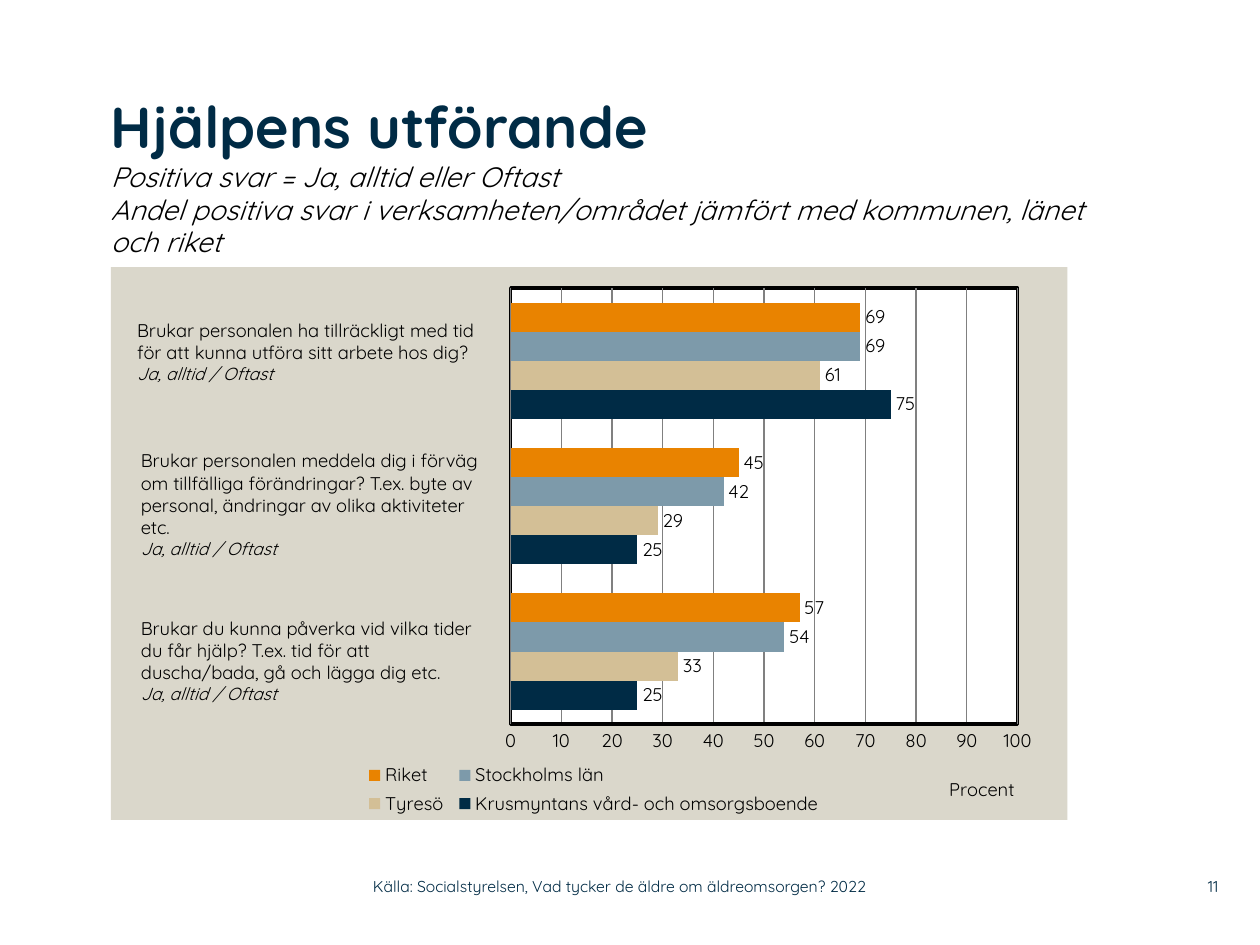
from copy import deepcopy
from dataclasses import dataclass

from lxml import etree
from pptx import Presentation
from pptx.chart.data import CategoryChartData
from pptx.dml.color import RGBColor
from pptx.enum.chart import XL_CHART_TYPE as ChartType
from pptx.enum.chart import XL_LABEL_POSITION as LabelPosition
from pptx.enum.chart import XL_LEGEND_POSITION as LegendPosition
from pptx.enum.chart import XL_TICK_LABEL_POSITION as TickLabels
from pptx.enum.chart import XL_TICK_MARK as TickMark
from pptx.enum.text import MSO_ANCHOR as Anchor
from pptx.enum.text import MSO_AUTO_SIZE as AutoSize
from pptx.enum.text import PP_ALIGN as Align
from pptx.oxml import parse_xml
from pptx.oxml.ns import nsdecls, qn
from pptx.util import Pt


@dataclass(frozen=True)
class Theme:
    font: str = "Quicksand"
    navy: str = "002B45"
    sand: str = "D3BF96"
    steel: str = "7D9AAA"
    orange: str = "E98300"
    panel: str = "DAD7CB"
    white: str = "FFFFFF"
    black: str = "000000"
    grid: str = "808080"
    title: float = 33
    subtitle: float = 16
    body: float = 10.5
    answer: float = 10
    footer: float = 9


theme = Theme()


def write(paragraph, text, size, color=theme.black, bold=False, italic=False, align=Align.LEFT):
    """Append text to the paragraph; each newline becomes a line break of the same format."""
    paragraph.alignment = align
    for number, line in enumerate(text.split("\n")):
        if number:
            paragraph.add_line_break()
            paragraph._p[-1].append(deepcopy(run._r.rPr))
        run = paragraph.add_run()
        run.text = line
        font = run.font
        font.name, font.size = theme.font, Pt(size)
        font.bold, font.italic = bold, italic
        font.color.rgb = RGBColor.from_string(color)


def set_layout(parent, index, x, y, w=None, h=None, inner=False):
    """Place a chart part by fractions of the chart area."""
    for old in parent.findall(qn("c:layout")):
        parent.remove(old)
    layout = parse_xml(f"<c:layout {nsdecls('c')}><c:manualLayout/></c:layout>")
    values = [("layoutTarget", "inner")] if inner else []
    values += [("xMode", "edge"), ("yMode", "edge"), ("x", x), ("y", y)]
    if w is not None:
        values += [("w", w), ("h", h)]
    for tag, value in values:
        etree.SubElement(layout[0], qn(f"c:{tag}")).set("val", str(value))
    parent.insert(index, layout)


prs = Presentation()
prs.slide_width, prs.slide_height = Pt(720), Pt(540)
slide = prs.slides.add_slide(prs.slide_layouts[5])

# Title
title = slide.shapes.title
title.left, title.top, title.width, title.height = Pt(63.4), Pt(54), Pt(561), Pt(87)
heading = title.text_frame
heading.margin_left = heading.margin_right = heading.margin_top = heading.margin_bottom = 0
heading.vertical_anchor = Anchor.TOP
heading.auto_size = AutoSize.NONE
heading.word_wrap = True
headline = heading.paragraphs[0]
headline.line_spacing = 0.97
write(headline, "Hjälpens utförande", theme.title, theme.navy, bold=True)
write(headline, " \nPositiva svar = Ja, alltid eller Oftast\n"
      "Andel positiva svar i verksamheten/området jämfört med kommunen, länet och riket",
      theme.subtitle, italic=True)

# Chart
results = [
    ("Krusmyntans vård- och omsorgsboende", (25, 25, 75), theme.navy),
    ("Tyresö", (33, 29, 61), theme.sand),
    ("Stockholms län", (54, 42, 69), theme.steel),
    ("Riket", (57, 45, 69), theme.orange),
]
data = CategoryChartData()
data.categories = ["1", "2", "3"]
for name, shares, _ in results:
    data.add_series(name, shares)
chart = slide.shapes.add_chart(ChartType.BAR_CLUSTERED, Pt(63.4), Pt(152.6),
                               Pt(546.5), Pt(316), data).chart
chart.has_title = False
chart.font.name, chart.font.size = theme.font, Pt(theme.body)
chart.font.color.rgb = RGBColor.from_string(theme.black)

bars = chart.plots[0]
bars.gap_width, bars.overlap, bars.vary_by_categories = 100, 0, False
for series, (_, _, color) in zip(bars.series, results):
    series.format.fill.solid()
    series.format.fill.fore_color.rgb = RGBColor.from_string(color)
    labels = series.data_labels
    labels.show_value = True
    labels.position = LabelPosition.OUTSIDE_END
    labels.font.name, labels.font.size = theme.font, Pt(theme.body)

chart.category_axis.visible = False
percent = chart.value_axis
percent.minimum_scale, percent.maximum_scale, percent.major_unit = 0, 100, 10
percent.major_tick_mark = percent.minor_tick_mark = TickMark.NONE
percent.tick_label_position = TickLabels.NEXT_TO_AXIS
percent.tick_labels.font.name = theme.font
percent.tick_labels.font.size = Pt(theme.body)
percent.format.line.color.rgb = RGBColor.from_string(theme.black)
percent.format.line.width = Pt(2)
percent.has_major_gridlines = True
percent.major_gridlines.format.line.color.rgb = RGBColor.from_string(theme.grid)
percent.major_gridlines.format.line.width = Pt(0.75)
write(percent.axis_title.text_frame.paragraphs[0], "Procent", theme.body)
set_layout(percent.axis_title._element, 1, 0.873, 0.915)

chart.has_legend = True
chart.legend.position = LegendPosition.BOTTOM
chart.legend.include_in_layout = False
chart.legend.font.name, chart.legend.font.size = theme.font, Pt(theme.body)
set_layout(chart.legend._element, 1, 0.26, 0.89, 0.49, 0.11)

chart_part = chart._chartSpace.chart
plot_area = chart_part.plotArea
set_layout(plot_area, 0, 0.418, 0.038, 0.53, 0.789, inner=True)
frame_line = (f'<a:ln w="{Pt(2)}"><a:solidFill><a:srgbClr val="{theme.black}"/>'
              "</a:solidFill></a:ln>")
areas = [(plot_area.append, theme.white, frame_line),
         (chart_part.addnext, theme.panel, "<a:ln><a:noFill/></a:ln>")]
for attach, fill, line in areas:
    attach(parse_xml(f"<c:spPr {nsdecls('c', 'a')}><a:solidFill>"
                     f'<a:srgbClr val="{fill}"/></a:solidFill>{line}</c:spPr>'))

# Questions beside the bars
questions = [
    (71.3, 178.6, 58.3, ["Brukar personalen ha tillräckligt med tid",
                         "för att kunna utföra sitt arbete hos dig?"]),
    (73.4, 253.4, 70.6, ["Brukar personalen meddela dig i förväg om tillfälliga förändringar? "
                         "T.ex. byte av personal, ändringar av olika aktiviteter etc."]),
    (73.4, 349.2, 58.3, ["Brukar du kunna påverka vid vilka tider",
                         "du får hjälp? T.ex. tid för att",
                         "duscha/bada, gå och lägga dig etc."]),
]
for left, top, height, lines in questions:
    question = slide.shapes.add_textbox(Pt(left), Pt(top), Pt(215), Pt(height)).text_frame
    question.word_wrap = True
    for number, line in enumerate(lines):
        paragraph = question.add_paragraph() if number else question.paragraphs[0]
        write(paragraph, line, theme.body)
    write(question.add_paragraph(), "Ja, alltid / Oftast", theme.answer, italic=True)

# Footer
footers = [
    (213.1, 319, "Källa: Socialstyrelsen, Vad tycker de äldre om äldreomsorgen? 2022", Align.LEFT),
    (662.4, 33.8, "11", Align.RIGHT),
]
for left, width, text, align in footers:
    footer = slide.shapes.add_textbox(Pt(left), Pt(496), Pt(width), Pt(21)).text_frame
    footer.margin_left = footer.margin_right = footer.margin_top = footer.margin_bottom = 0
    footer.word_wrap = True
    footer.vertical_anchor = Anchor.MIDDLE
    write(footer.paragraphs[0], text, theme.footer, theme.navy, align=align)

prs.save("out.pptx")
